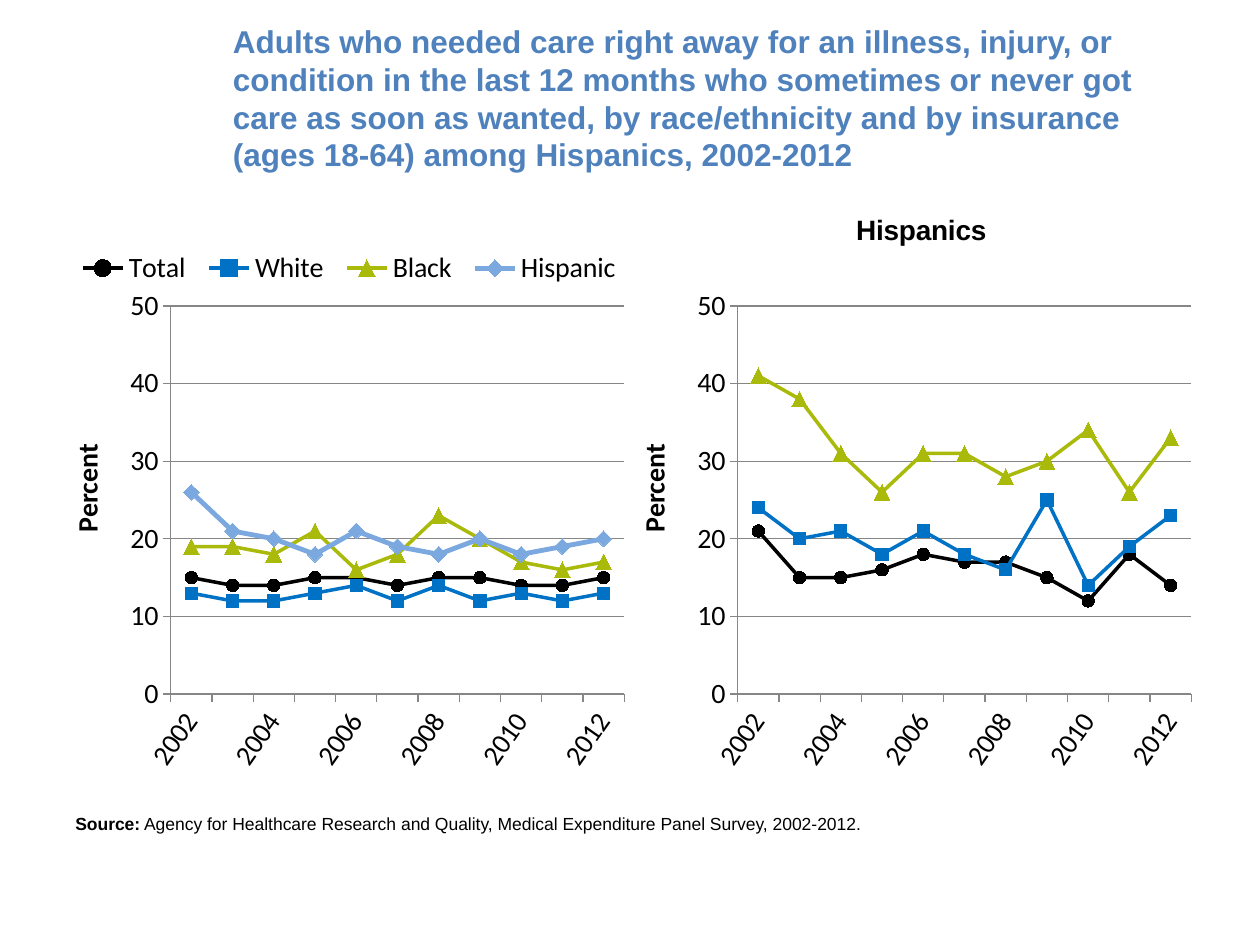
import lxml.etree
import pptx
import pptx.chart.data
import pptx.dml.color
import pptx.enum.chart
import pptx.enum.text
import pptx.oxml.ns
import pptx.util

Inches = pptx.util.Inches
Pt = pptx.util.Pt
qn = pptx.oxml.ns.qn
XL = pptx.enum.chart

COLORS = {
    "title": "4F81BD",
    "text": "000000",
    "grid": "868686",
    "black": "000000",
    "blue": "0072C6",
    "green": "AABA0A",
    "light_blue": "7BA8DF",
}
YEARS = [str(year) for year in range(2002, 2013)]
STYLES = [
    ("black", "CIRCLE", 7, 2),
    ("blue", "SQUARE", 7, 2),
    ("green", "TRIANGLE", 9, 2),
    ("light_blue", "DIAMOND", 9, 2.75),
]
RACE = [
    ("Total", (15, 14, 14, 15, 15, 14, 15, 15, 14, 14, 15)),
    ("White", (13, 12, 12, 13, 14, 12, 14, 12, 13, 12, 13)),
    ("Black", (19, 19, 18, 21, 16, 18, 23, 20, 17, 16, 17)),
    ("Hispanic", (26, 21, 20, 18, 21, 19, 18, 20, 18, 19, 20)),
]
HISPANICS = [
    ("", (21, 15, 15, 16, 18, 17, 17, 15, 12, 18, 14)),
    ("", (24, 20, 21, 18, 21, 18, 16, 25, 14, 19, 23)),
    ("", (41, 38, 31, 26, 31, 31, 28, 30, 34, 26, 33)),
]


class Deck:
    """Holds the style and the current slide."""

    def __init__(self, prs):
        self.s = prs.slides.add_slide(prs.slide_layouts[6])

    def color(self, name):
        return pptx.dml.color.RGBColor.from_string(COLORS[name])

    def font(self, font, size, bold=False, name="Arial", color="text"):
        font.name, font.size, font.bold = name, Pt(size), bold
        font.color.rgb = self.color(color)

    def line(self, line, color, width):
        line.color.rgb = self.color(color)
        line.width = Pt(width)

    def text(self, box, runs, size, color="text", anchor="TOP"):
        sp = self.s.shapes.add_textbox(*map(Inches, box))
        tf = sp.text_frame
        tf.word_wrap = True
        tf.vertical_anchor = getattr(pptx.enum.text.MSO_ANCHOR, anchor)
        p = tf.paragraphs[0]
        for words, bold in runs:
            r = p.add_run()
            r.text = words
            self.font(r.font, size, bold, color=color)

    def place(self, parent, index, inner=False, **position):
        for old in parent.findall(qn("c:layout")):
            parent.remove(old)
        layout = lxml.etree.Element(qn("c:layout"))
        manual = lxml.etree.SubElement(layout, qn("c:manualLayout"))
        values = {"layoutTarget": "inner"} if inner else {}
        values.update(xMode="edge", yMode="edge", **position)
        for tag, value in values.items():
            lxml.etree.SubElement(manual, qn("c:" + tag)).set("val", str(value))
        parent.insert(index, layout)

    def axes(self, chart):
        cat, val = chart.category_axis, chart.value_axis
        for axis in (cat, val):
            axis.major_tick_mark = XL.XL_TICK_MARK.OUTSIDE
            axis.minor_tick_mark = XL.XL_TICK_MARK.NONE
            self.font(axis.tick_labels.font, 16, name="Calibri")
            self.line(axis.format.line, "grid", 0.75)
        cat._element.txPr.bodyPr.set("rot", "-3300000")
        last = cat._element.find(qn("c:noMultiLvlLbl"))
        for tag, step in (("tickLblSkip", "2"), ("tickMarkSkip", "1")):
            skip = lxml.etree.Element(qn("c:" + tag))
            skip.set("val", step)
            last.addprevious(skip)
        val.minimum_scale, val.maximum_scale, val.major_unit = 0, 50, 10
        val.has_major_gridlines = True
        self.line(val.major_gridlines.format.line, "grid", 0.75)
        val.tick_labels.number_format = "0"
        val.tick_labels.number_format_is_linked = False
        self.title(val.axis_title, "Percent", "Calibri", x=0, y=0.41)

    def title(self, title, words, name, **position):
        r = title.text_frame.paragraphs[0].add_run()
        r.text = words
        self.font(r.font, 16, True, name)
        self.place(title._element, 1, **position)

    def chart(self, left, series, title=None, legend=False):
        data = pptx.chart.data.CategoryChartData(number_format="0")
        data.categories = YEARS
        for name, values in series:
            data.add_series(name, values)
        box = map(Inches, (left, 1.6, 4.5, 4.6))
        chart = self.s.shapes.add_chart(
            XL.XL_CHART_TYPE.LINE_MARKERS, *box, data).chart
        self.font(chart.font, 10)
        chart.has_title = bool(title)
        if title:
            self.title(chart.chart_title, title, "Arial", x=0.39, y=0.01)
        chart.has_legend = legend
        if legend:
            chart.legend.position = XL.XL_LEGEND_POSITION.TOP
            chart.legend.include_in_layout = False
            self.font(chart.legend.font, 16, name="Calibri")
            self.place(chart.legend._element, 1, x=0.01, y=0.08, w=0.99, h=0.07)
        self.axes(chart)
        area = chart._chartSpace.chart.plotArea
        self.place(area, 0, inner=True, x=0.19, y=0.18, w=0.8, h=0.67)
        plot = chart.plots[0]
        plot.vary_by_categories = False
        for ser, (color, marker, size, width) in zip(plot.series, STYLES):
            ser.smooth = False
            self.line(ser.format.line, color, width)
            ser.marker.style = getattr(XL.XL_MARKER_STYLE, marker)
            ser.marker.size = size
            ser.marker.format.fill.solid()
            ser.marker.format.fill.fore_color.rgb = self.color(color)
            self.line(ser.marker.format.line, color, 0.75)


def main():
    prs = pptx.Presentation()
    prs.slide_width, prs.slide_height = Inches(10), Inches(7.5)
    deck = Deck(prs)
    deck.text((1.75, 0.3, 7.75, 0.95), [(
        "Adults who needed care right away for an illness, injury, or "
        "condition in the last 12 months who sometimes or never got care as "
        "soon as wanted, by race/ethnicity and by insurance (ages 18-64) "
        "among Hispanics, 2002-2012", True)], 18, "title", "MIDDLE")
    deck.text((0.5, 6.4, 9, 0.27), [
        ("Source:", True),
        (" Agency for Healthcare Research and Quality, Medical Expenditure "
         "Panel Survey, 2002-2012.", False)], 10)
    deck.chart(5, HISPANICS, title="Hispanics")
    deck.chart(0.5, RACE, legend=True)
    prs.save("out.pptx")


if __name__ == "__main__":
    main()
